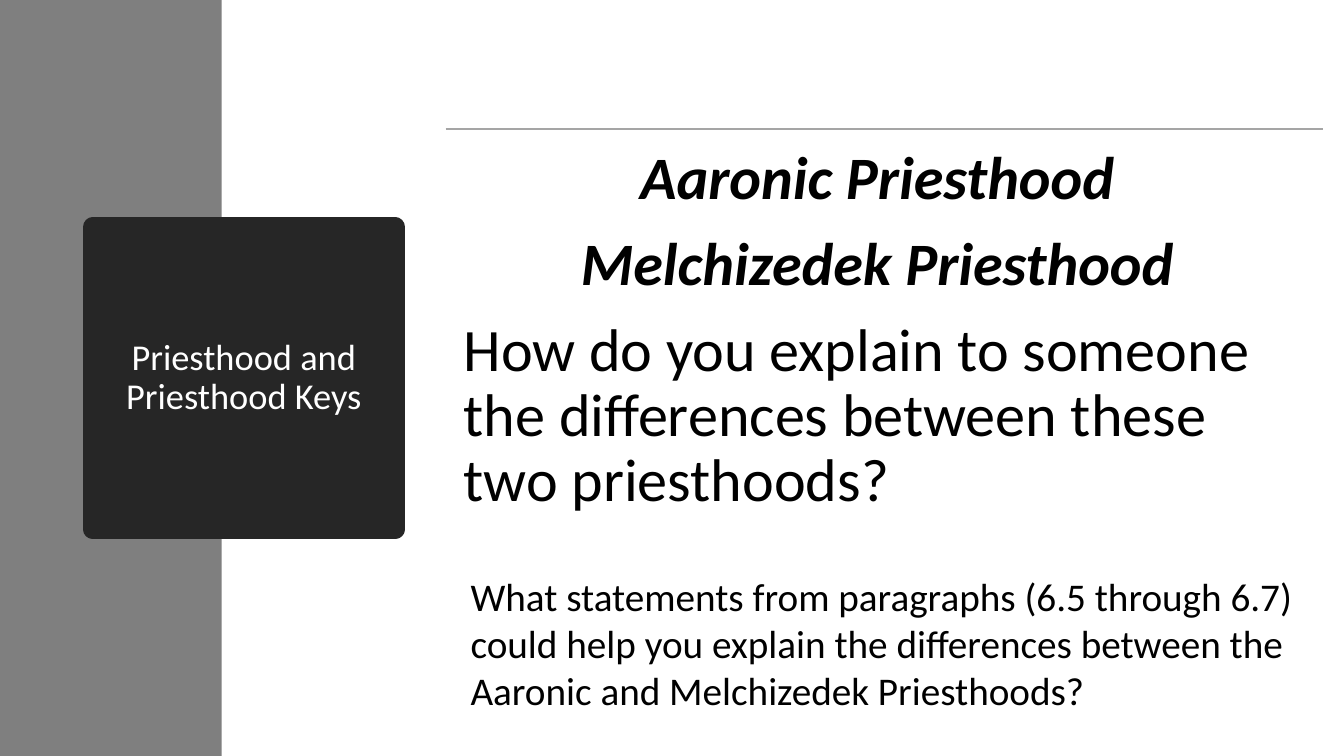
import pptx
import pptx.util
import pptx.dml.color
import pptx.enum.shapes
import pptx.enum.text
import lxml.etree
from pptx.util import Cm

GREY = pptx.dml.color.RGBColor(0x7F, 0x7F, 0x7F)
CHARCOAL = pptx.dml.color.RGBColor(0x26, 0x26, 0x26)
RULE_GREY = pptx.dml.color.RGBColor(0xA5, 0xA5, 0xA5)
BLACK = pptx.dml.color.RGBColor(0, 0, 0)
WHITE = pptx.dml.color.RGBColor(0xFF, 0xFF, 0xFF)
ALIGN = pptx.enum.text.PP_ALIGN
DRAWING = "{http://schemas.openxmlformats.org/drawingml/2006/main}"


def style(paragraph, size, color, align=ALIGN.LEFT, line_spacing=1.0):
    paragraph.alignment = align
    paragraph.line_spacing = line_spacing
    paragraph.font.name = "Calibri"
    paragraph.font.size = pptx.util.Pt(size)
    paragraph.font.color.rgb = color


def add_block(slide, left, top, width, height, color):
    block = slide.shapes.add_shape(
        pptx.enum.shapes.MSO_SHAPE.RECTANGLE, left, top, width, height)
    block.shadow.inherit = False
    block.fill.solid()
    block.fill.fore_color.rgb = color
    block.line.fill.background()
    return block


def add_title(slide, left, top, side, wording):
    title = add_block(slide, left, top, side, side, CHARCOAL)
    # A thick outline with round joins softens the corners
    title.line.color.rgb = CHARCOAL
    title.line.width = pptx.util.Pt(13.75)
    lxml.etree.SubElement(title.line._get_or_add_ln(), DRAWING + "round")
    frame = title.text_frame
    frame.word_wrap = True
    frame.vertical_anchor = pptx.enum.text.MSO_ANCHOR.MIDDLE
    frame.text = wording
    style(frame.paragraphs[0], 26, WHITE, ALIGN.CENTER, 0.9)


def add_discussion(slide, left, top, width, height, headings, question):
    # Rule along the top edge
    rule = slide.shapes.add_connector(
        pptx.enum.shapes.MSO_CONNECTOR.STRAIGHT, left, top, left + width, top)
    rule.line.color.rgb = RULE_GREY
    rule.line.width = pptx.util.Pt(1)
    lxml.etree.SubElement(rule._element.spPr, DRAWING + "effectLst")

    # Centred headings, then the question
    frame = slide.shapes.add_textbox(left, top, width, height).text_frame
    frame.word_wrap = True
    frame.margin_left = frame.margin_right = Cm(0.46)
    frame.margin_top = frame.margin_bottom = Cm(0.46)
    frame.text = "\n".join([*headings, question])
    for index, paragraph in enumerate(frame.paragraphs):
        is_heading = index < len(headings)
        style(paragraph, 43, BLACK, ALIGN.CENTER if is_heading else ALIGN.LEFT, 0.9)
        paragraph.space_after = pptx.util.Pt(15)
        paragraph.font.bold = paragraph.font.italic = is_heading


def add_follow_up(slide, left, top, width, height, wording):
    frame = slide.shapes.add_textbox(left, top, width, height).text_frame
    frame.word_wrap = True
    frame.text = wording
    style(frame.paragraphs[0], 28, BLACK)


def main():
    deck = pptx.Presentation()
    deck.slide_width, deck.slide_height = Cm(33.87), Cm(19.05)
    slide = deck.slides.add_slide(deck.slide_layouts[6])

    # Sidebar and title
    add_block(slide, 0, 0, Cm(5.59), deck.slide_height, GREY)
    add_title(slide, Cm(2.34), Cm(5.72), Cm(7.62), "Priesthood and Priesthood Keys")

    # Main text
    add_discussion(
        slide, Cm(11.23), Cm(3.25), Cm(22.1), Cm(10.72),
        ["Aaronic Priesthood ", "Melchizedek Priesthood "],
        "How do you explain to someone the differences between these two priesthoods?")
    add_follow_up(
        slide, Cm(11.61), Cm(14.3), Cm(21.74), Cm(3.84),
        "What statements from paragraphs (6.5 through 6.7) could help you explain "
        "the differences between the Aaronic and Melchizedek Priesthoods?")

    deck.save("out.pptx")


if __name__ == "__main__":
    main()
